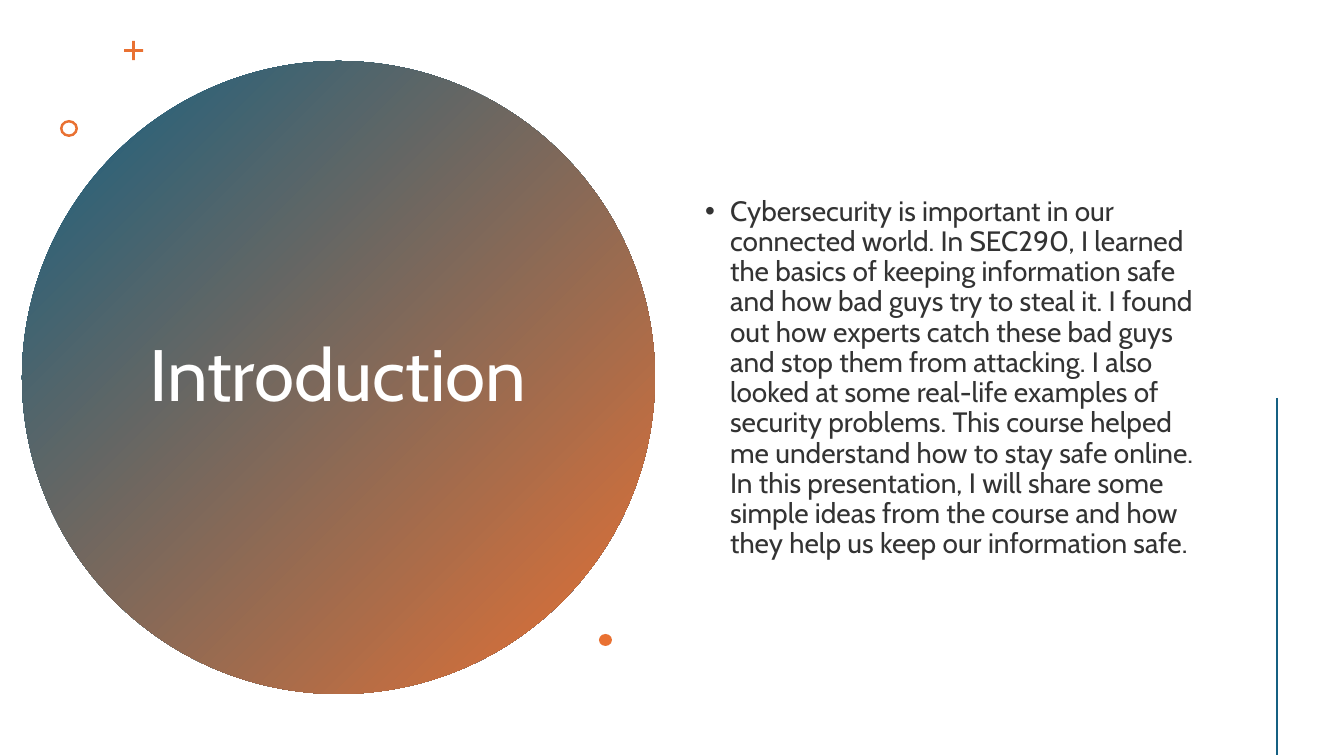
"""Build the Introduction slide: gradient disc, title, body text and accents."""
from lxml.etree import SubElement
from pptx import Presentation
from pptx.dml.color import RGBColor
from pptx.enum.shapes import MSO_CONNECTOR, MSO_SHAPE
from pptx.enum.text import MSO_ANCHOR, MSO_AUTO_SIZE, PP_ALIGN
from pptx.oxml.ns import qn
from pptx.util import Pt

EMU_PER_PX = 914400 / 100.8
BLUE, ORANGE, WHITE, INK = "156082", "E97132", "FFFFFF", "333333"

SLIDE_SIZE = (1344, 756)
DISC = (22, 61, 633, 633)
RULE = (1277, 398, 1277, 755)
BULLET_INDENT = 25

TITLE = "Introduction"
BODY = (
    "Cybersecurity is important in our connected world. In SEC290, I learned "
    "the basics of keeping information safe and how bad guys try to steal it. "
    "I found out how experts catch these bad guys and stop them from attacking. "
    "I also looked at some real-life examples of security problems. This course "
    "helped me understand how to stay safe online. In this presentation, I will "
    "share some simple ideas from the course and how they help us keep our "
    "information safe."
)
TEXTS = [
    (TITLE, (137, 142, 402, 471), WHITE, {"size": Pt(52)},
     {"alignment": PP_ALIGN.CENTER, "line_spacing": 0.9, "space_before": Pt(0)}),
    (BODY, (695, 57, 526, 643), INK, {"size": Pt(20)},
     {"alignment": PP_ALIGN.LEFT, "line_spacing": 0.9, "space_before": Pt(10)}),
]
FRAME_FORMAT = {
    "word_wrap": True,
    "auto_size": MSO_AUTO_SIZE.NONE,
    "vertical_anchor": MSO_ANCHOR.MIDDLE,
}
ACCENTS = [
    (MSO_SHAPE.CROSS, (124, 41, 19, 19), 0.43),
    (MSO_SHAPE.DONUT, (60, 120, 18, 17), 0.15),
    (MSO_SHAPE.OVAL, (599, 634, 13, 12), None),
]


def px(*lengths):
    return [round(length * EMU_PER_PX) for length in lengths]


def rgb(hex_string):
    return RGBColor.from_string(hex_string)


def apply(target, values):
    for attribute, value in values.items():
        setattr(target, attribute, value)


def add_plain(slide, preset, box):
    plain = slide.shapes.add_shape(preset, *px(*box))
    plain.shadow.inherit = False
    plain.line.fill.background()
    return plain


def add_disc(slide):
    disc = add_plain(slide, MSO_SHAPE.OVAL, DISC)
    disc.fill.gradient()
    disc.fill.gradient_angle = 315
    for stop, position, color in zip(disc.fill.gradient_stops, (0, 1), (BLUE, ORANGE)):
        stop.position = position
        stop.color.rgb = rgb(color)
    slide.shapes._spTree.insert(2, disc._element)


def fill_placeholder(holder, text, box, color, font_format, paragraph_format):
    apply(holder, dict(zip(("left", "top", "width", "height"), px(*box))))
    apply(holder.text_frame, FRAME_FORMAT)
    paragraph = holder.text_frame.paragraphs[0]
    apply(paragraph, paragraph_format)
    words = paragraph.add_run()
    words.text = text
    apply(words.font, {"name": "Cabin", **font_format})
    words.font.color.rgb = rgb(color)
    return paragraph


def add_bullet(paragraph):
    indent, = px(BULLET_INDENT)
    properties = paragraph._p.get_or_add_pPr()
    properties.set("marL", str(indent))
    properties.set("indent", str(-indent))
    SubElement(properties, qn("a:buFont"), typeface="Arial")
    SubElement(properties, qn("a:buChar"), char="•")


def add_accents(slide):
    for preset, box, thickness in ACCENTS:
        accent = add_plain(slide, preset, box)
        accent.fill.solid()
        accent.fill.fore_color.rgb = rgb(ORANGE)
        if thickness is not None:
            accent.adjustments[0] = thickness


def add_rule(slide):
    rule = slide.shapes.add_connector(MSO_CONNECTOR.STRAIGHT, *px(*RULE))
    rule.line.color.rgb = rgb(BLUE)
    rule.line.width = Pt(2)
    SubElement(rule._element.spPr, qn("a:effectLst"))


def main():
    deck = Presentation()
    deck.slide_width, deck.slide_height = px(*SLIDE_SIZE)
    slide = deck.slides.add_slide(deck.slide_layouts[1])
    add_disc(slide)
    paragraphs = [
        fill_placeholder(holder, *content)
        for holder, content in zip(slide.placeholders, TEXTS)
    ]
    add_bullet(paragraphs[1])
    add_accents(slide)
    add_rule(slide)
    deck.save("out.pptx")


if __name__ == "__main__":
    main()
